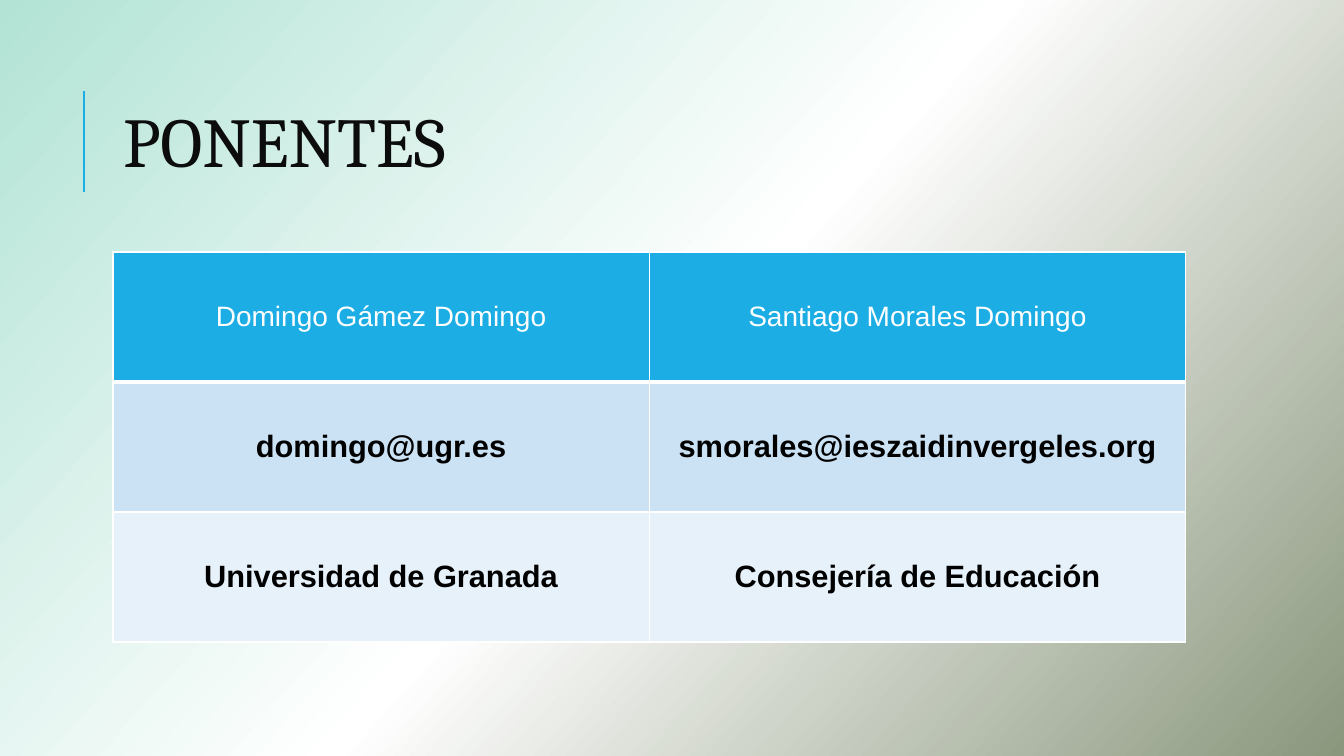
from copy import deepcopy

from lxml.etree import SubElement
from pptx import Presentation
from pptx.dml.color import RGBColor
from pptx.enum.shapes import MSO_CONNECTOR
from pptx.enum.text import MSO_ANCHOR, PP_ALIGN
from pptx.oxml.ns import qn
from pptx.util import Inches, Pt

MINT = RGBColor(0xB2, 0xE3, 0xD5)
WHITE = RGBColor(0xFF, 0xFF, 0xFF)
OLIVE = RGBColor(0x8A, 0x97, 0x7D)
BLUE = RGBColor(0x1C, 0xAD, 0xE4)
LIGHT_BLUE = RGBColor(0xCB, 0xE2, 0xF5)
PALE_BLUE = RGBColor(0xE7, 0xF1, 0xFA)
INK = RGBColor(0x0C, 0x0C, 0x0C)
BLACK = RGBColor(0, 0, 0)

LEFT = Inches(1.12)
COLUMN_WIDTH = Inches(5.32)
ROW_HEIGHT = Inches(1.29)


def add_span(para, text, font, size, color, bold=False):
    span = para.add_run()
    span.text = text
    span.font.name = font
    span.font.size = Pt(size)
    span.font.bold = bold
    span.font.color.rgb = color


def add_border(cell, side, width):
    line = SubElement(cell._tc.get_or_add_tcPr(), qn(f"a:{side}"), w=str(Pt(width)))
    fill = SubElement(line, qn("a:solidFill"))
    SubElement(fill, qn("a:srgbClr"), val=str(WHITE))


deck = Presentation()
deck.slide_width = Inches(13.33)
deck.slide_height = Inches(7.5)
page = deck.slides.add_slide(deck.slide_layouts[5])

backdrop = page.background.fill
backdrop.gradient()
backdrop.gradient_angle = 360 - 42
stop_list = page._element.find(".//" + qn("a:gsLst"))
stop_list.insert(1, deepcopy(stop_list[0]))
for stop, position, color in zip(backdrop.gradient_stops, (0, 0.5, 1), (MINT, WHITE, OLIVE)):
    stop.position = position
    stop.color.rgb = color

accent = page.shapes.add_connector(
    MSO_CONNECTOR.STRAIGHT, Inches(0.83), Inches(1.9), Inches(0.83), Inches(0.9)
)
accent.line.color.rgb = BLUE
accent.line.width = Pt(1.5)
SubElement(accent._element.spPr, qn("a:effectLst"))

title = page.shapes.title
title.left, title.top = LEFT, Inches(0.64)
title.width, title.height = 2 * COLUMN_WIDTH, Inches(1.64)
title.text_frame.vertical_anchor = MSO_ANCHOR.MIDDLE
para = title.text_frame.paragraphs[0]
para.alignment = PP_ALIGN.LEFT
para.line_spacing = 0.8
add_span(para, "PONENTES", "Cambria", 50, INK)

speaker_rows = [
    (("Domingo Gámez Domingo", "Santiago Morales Domingo"), BLUE, WHITE, 20, False),
    (("domingo@ugr.es", "smorales@ieszaidinvergeles.org"), LIGHT_BLUE, BLACK, 22, True),
    (("Universidad de Granada", "Consejería de Educación"), PALE_BLUE, BLACK, 22, True),
]
speakers = page.shapes.add_table(
    len(speaker_rows), 2, LEFT, Inches(2.5), 2 * COLUMN_WIDTH, len(speaker_rows) * ROW_HEIGHT
).table
for column in speakers.columns:
    column.width = COLUMN_WIDTH

for row, (texts, fill, color, size, bold) in enumerate(speaker_rows):
    speakers.rows[row].height = ROW_HEIGHT
    for column, text in enumerate(texts):
        cell = speakers.cell(row, column)
        cell.vertical_anchor = MSO_ANCHOR.MIDDLE
        for side in ("lnL", "lnR", "lnT", "lnB"):
            header_edge = (row, side) in ((0, "lnB"), (1, "lnT"))
            add_border(cell, side, 3 if header_edge else 1)
        cell.fill.solid()
        cell.fill.fore_color.rgb = fill
        para = cell.text_frame.paragraphs[0]
        para.alignment = PP_ALIGN.CENTER
        add_span(para, text, "Arial", size, color, bold)

deck.save("out.pptx")
